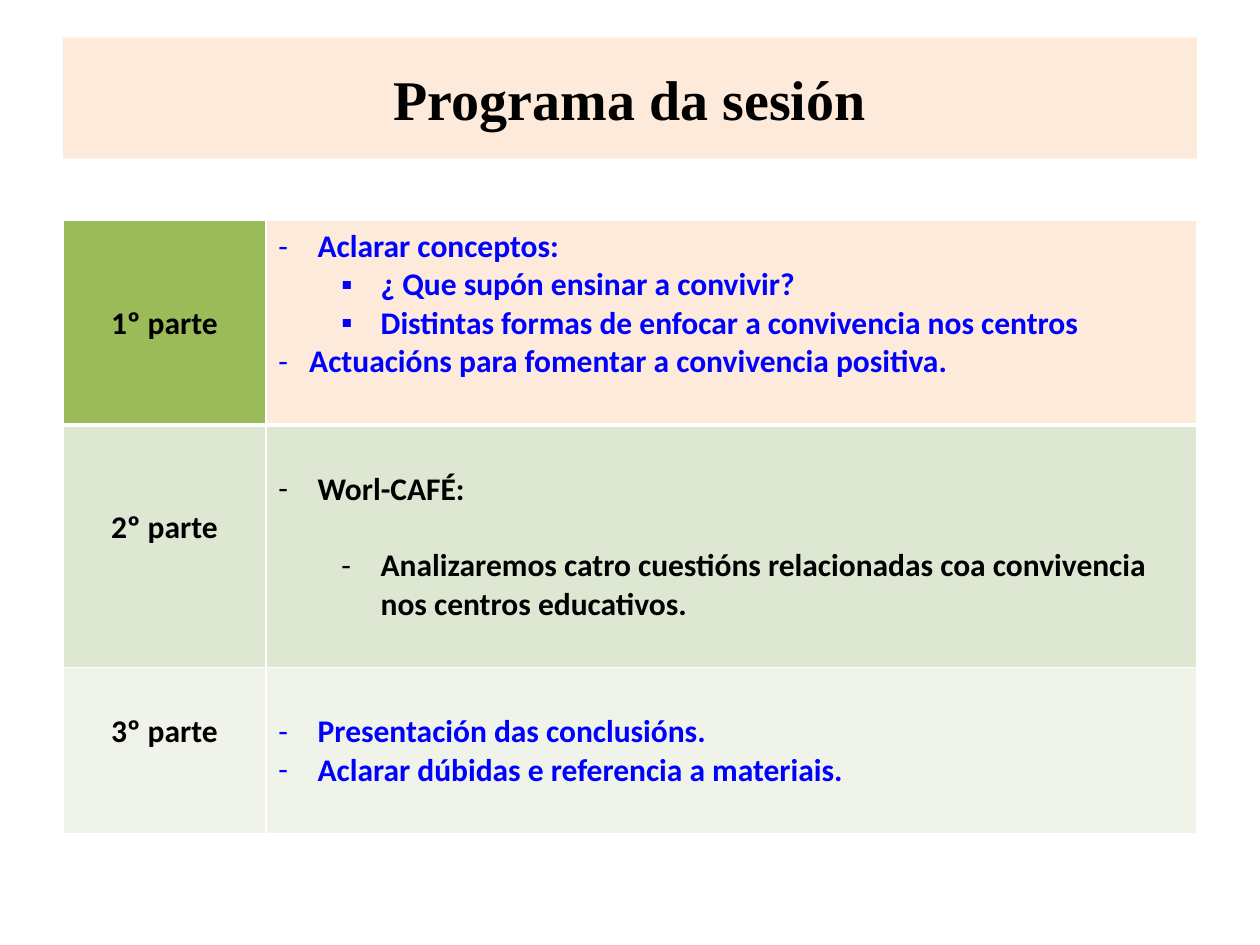
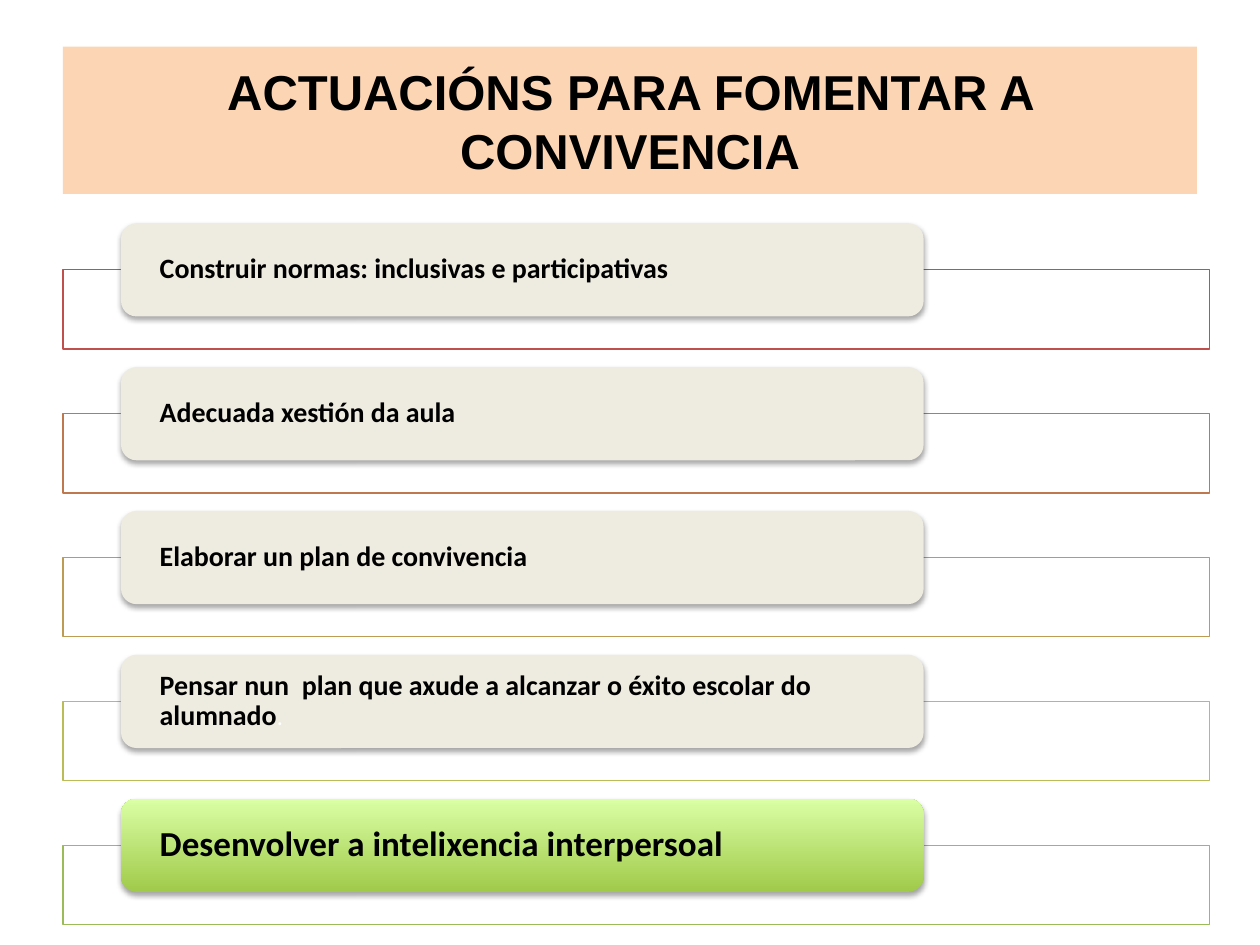
"""Build two slides: the session programme and the actions for living together."""
import pptx
import pptx.dml.color
import pptx.enum.shapes
import pptx.enum.text
import pptx.oxml
import pptx.oxml.ns
import pptx.util

Cm = pptx.util.Cm
Pt = pptx.util.Pt
RGBColor = pptx.dml.color.RGBColor
PP_ALIGN = pptx.enum.text.PP_ALIGN
MIDDLE = pptx.enum.text.MSO_ANCHOR.MIDDLE
SHAPE = pptx.enum.shapes.MSO_SHAPE

BLACK = RGBColor(0x00, 0x00, 0x00)
WHITE = RGBColor(0xFF, 0xFF, 0xFF)
BLUE = RGBColor(0x00, 0x00, 0xFF)
PALE_PEACH = RGBColor(0xFD, 0xEA, 0xDA)
PEACH = RGBColor(0xFC, 0xD5, 0xB5)
GREEN = RGBColor(0x9B, 0xBB, 0x59)
SAGE = RGBColor(0xDE, 0xE7, 0xD1)
PALE_SAGE = RGBColor(0xEF, 0xF3, 0xEA)
CREAM = RGBColor(0xEE, 0xEC, 0xE1)
LIME_DARK = RGBColor(0xA0, 0xCA, 0x4A)
LIME_LIGHT = RGBColor(0xDA, 0xFF, 0xA5)
RED = RGBColor(0xC0, 0x50, 0x4D)
RUST = RGBColor(0xBF, 0x77, 0x50)
OCHRE = RGBColor(0xBD, 0x9B, 0x53)
OLIVE = RGBColor(0xBC, 0xBC, 0x56)

LEFT = 1.27
BODY_FONT = {"name": "Calibri", "size": Pt(18), "bold": True}
LINE = 0.775
CELL_TOP = 0.13

DASH = {"char": "-", "margin": 0.79, "hang": 0.79}
SHORT_DASH = {"char": "-", "margin": 0.62, "hang": 0.62}
SUB_DASH = {"char": "-", "margin": 2.06, "hang": 0.79}
SUB_SQUARE = {"char": "▪", "margin": 2.06, "hang": 0.79}

PROGRAMME = [
    {"label": "1º parte", "height": 4.12, "fills": (GREEN, PALE_PEACH),
     "color": BLUE, "lead": (2, 0),
     "items": [(DASH, "Aclarar conceptos:", 0),
               (SUB_SQUARE, "¿ Que supón ensinar a convivir?", 0),
               (SUB_SQUARE, "Distintas formas de enfocar a convivencia nos centros", 0),
               (SHORT_DASH, "Actuacións para fomentar a convivencia positiva.", 0)]},
    {"label": "2º parte", "height": 4.89, "fills": (SAGE, SAGE),
     "color": BLACK, "lead": (2, 1),
     "items": [(DASH, "Worl-CAFÉ:", 0),
               (SUB_DASH, "Analizaremos catro cuestións relacionadas coa "
                          "convivencia nos centros educativos.", 22)]},
    {"label": "3º parte", "height": 3.35, "fills": (PALE_SAGE, PALE_SAGE),
     "color": BLUE, "lead": (1, 1),
     "items": [(DASH, "Presentación das conclusións.", 0),
               (DASH, "Aclarar dúbidas e referencia a materiais.", 0)]},
]

ACTIONS = [
    ("Construir normas: inclusivas e participativas", RED),
    ("Adecuada xestión da aula", RUST),
    ("Elaborar un plan de convivencia", OCHRE),
    ("Pensar nun  plan que axude a alcanzar o éxito escolar do alumnado", OLIVE),
    ("Desenvolver a intelixencia interpersoal", GREEN),
]


def set_attrs(obj, values):
    """Set every attribute named in a dict of values."""
    for name, value in values.items():
        setattr(obj, name, value)


def xml(text):
    """Parse an XML fragment whose root lacks the drawing namespace."""
    tag, rest = text[1:].split(" ", 1)
    return pptx.oxml.parse_xml(f"<{tag} {pptx.oxml.ns.nsdecls('a')} {rest}")


def add_run(p, text, color, font):
    """Append a formatted run to a paragraph."""
    r = p.add_run()
    r.text = text
    set_attrs(r.font, font)
    r.font.color.rgb = color


def add_box(slide, kind, box, fill, line=None):
    """Add a flat shape with a solid fill and an optional thin outline."""
    sp = slide.shapes.add_shape(kind, *(Cm(v) for v in box))
    sp.shadow.inherit = False
    sp.fill.solid()
    sp.fill.fore_color.rgb = fill
    if line is None:
        sp.line.fill.background()
    else:
        sp.line.color.rgb = line
        sp.line.width = Pt(0.75)
    return sp


def add_title(slide, text, top, height, fill, font_name, size):
    """Add the full-width title band with centred bold text."""
    sp = add_box(slide, SHAPE.RECTANGLE, (LEFT, top, 22.86, height), fill)
    tf = sp.text_frame
    set_attrs(tf, {"word_wrap": True, "vertical_anchor": MIDDLE})
    p = tf.paragraphs[0]
    p.alignment = PP_ALIGN.CENTER
    add_run(p, text, BLACK, {"name": font_name, "size": Pt(size), "bold": True})


def set_bullet(p, char, margin, hang):
    """Give a paragraph a bullet with a hanging indent."""
    pPr = p._p.get_or_add_pPr()
    pPr.set("marL", str(Cm(margin)))
    pPr.set("indent", str(-Cm(hang)))
    pPr.append(xml('<a:buFont typeface="Calibri"/>'))
    pPr.append(xml(f'<a:buChar char="{char}"/>'))


def style_cell(cell, fill, lead, top_width, bottom_width):
    """Fill a cell, push its text down by whole lines and draw white borders."""
    cell.fill.solid()
    cell.fill.fore_color.rgb = fill
    cell.margin_top = Cm(CELL_TOP + lead * LINE)
    widths = {"lnL": 1, "lnR": 1, "lnT": top_width, "lnB": bottom_width}
    for i, (side, width) in enumerate(widths.items()):
        cell._tc.get_or_add_tcPr().insert(i, xml(
            f'<a:{side} w="{Pt(width)}"><a:solidFill><a:srgbClr val="{WHITE}"/>'
            f'</a:solidFill></a:{side}>'))


def add_programme(slide, top):
    """Add the table with one row for each part of the session."""
    height = sum(part["height"] for part in PROGRAMME)
    table = slide.shapes.add_table(len(PROGRAMME), 2, Cm(LEFT), Cm(top),
                                   Cm(22.86), Cm(height)).table
    set_attrs(table, {"first_row": False, "horz_banding": False})
    for column, width in zip(table.columns, (4.09, 18.77)):
        column.width = Cm(width)
    for i, part in enumerate(PROGRAMME):
        table.rows[i].height = Cm(part["height"])
        cells = [table.cell(i, j) for j in range(2)]
        for cell, fill, lead in zip(cells, part["fills"], part["lead"]):
            style_cell(cell, fill, lead, 3 if i == 1 else 1, 3 if i == 0 else 1)
        label, body = (cell.text_frame for cell in cells)
        p = label.paragraphs[0]
        p.alignment = PP_ALIGN.CENTER
        add_run(p, part["label"], BLACK, BODY_FONT)
        for n, (bullet, text, before) in enumerate(part["items"]):
            p = body.add_paragraph() if n else body.paragraphs[0]
            if before:
                p.space_before = Pt(before)
            set_bullet(p, **bullet)
            add_run(p, text, part["color"], BODY_FONT)


def add_shadow(sp):
    """Give a shape a soft shadow straight below it."""
    sp._element.spPr.find(pptx.oxml.ns.qn("a:effectLst")).append(xml(
        f'<a:outerShdw blurRad="{Pt(3.1)}" dist="{Pt(1.8)}" dir="5400000" '
        f'rotWithShape="0"><a:srgbClr val="{BLACK}"><a:alpha val="35000"/>'
        '</a:srgbClr></a:outerShdw>'))


def add_action(slide, top, text, line, size):
    """Add an outlined panel with a rounded card over it and return the card."""
    add_box(slide, SHAPE.RECTANGLE, (LEFT, top + 0.94, 23.11, 1.6), WHITE, line)
    sp = add_box(slide, SHAPE.ROUNDED_RECTANGLE, (2.44, top, 16.18, 1.88), CREAM)
    add_shadow(sp)
    tf = sp.text_frame
    set_attrs(tf, {"word_wrap": True, "vertical_anchor": MIDDLE,
                   "margin_left": Cm(0.69), "margin_right": Cm(0.69),
                   "margin_top": 0, "margin_bottom": 0})
    p = tf.paragraphs[0]
    set_attrs(p, {"alignment": PP_ALIGN.LEFT, "line_spacing": 0.9})
    add_run(p, text, BLACK, {**BODY_FONT, "size": Pt(size)})
    return sp


def highlight(sp):
    """Fill a card with a vertical lime gradient."""
    sp.fill.gradient()
    sp.fill.gradient_angle = 90
    for stop, color in zip(sp.fill.gradient_stops, (LIME_DARK, LIME_LIGHT)):
        stop.color.rgb = color


def add_actions(slide, top, pitch):
    """Stack the action cards at an equal pitch and highlight the last one."""
    cards = []
    for i, (text, line) in enumerate(ACTIONS):
        size = 20 if i == len(ACTIONS) - 1 else 16
        cards.append(add_action(slide, top + i * pitch, text, line, size))
    add_run(cards[3].text_frame.paragraphs[0], ".", WHITE,
            {"name": "Calibri", "size": Pt(14), "bold": False})
    highlight(cards[-1])


def main():
    """Build both slides and save the file."""
    prs = pptx.Presentation()
    set_attrs(prs, {"slide_width": Cm(25.4), "slide_height": Cm(19.05)})
    blank = prs.slide_layouts[6]

    slide = prs.slides.add_slide(blank)
    add_title(slide, "Programa da sesión", 0.76, 2.44, PALE_PEACH,
              "Times New Roman", 32)
    add_programme(slide, 4.45)

    slide = prs.slides.add_slide(blank)
    add_title(slide, "ACTUACIÓNS PARA FOMENTAR A CONVIVENCIA", 0.94, 2.97, PEACH,
              "Arial", 28)
    add_actions(slide, 4.5, 2.9)

    prs.save("out.pptx")


if __name__ == "__main__":
    main()
